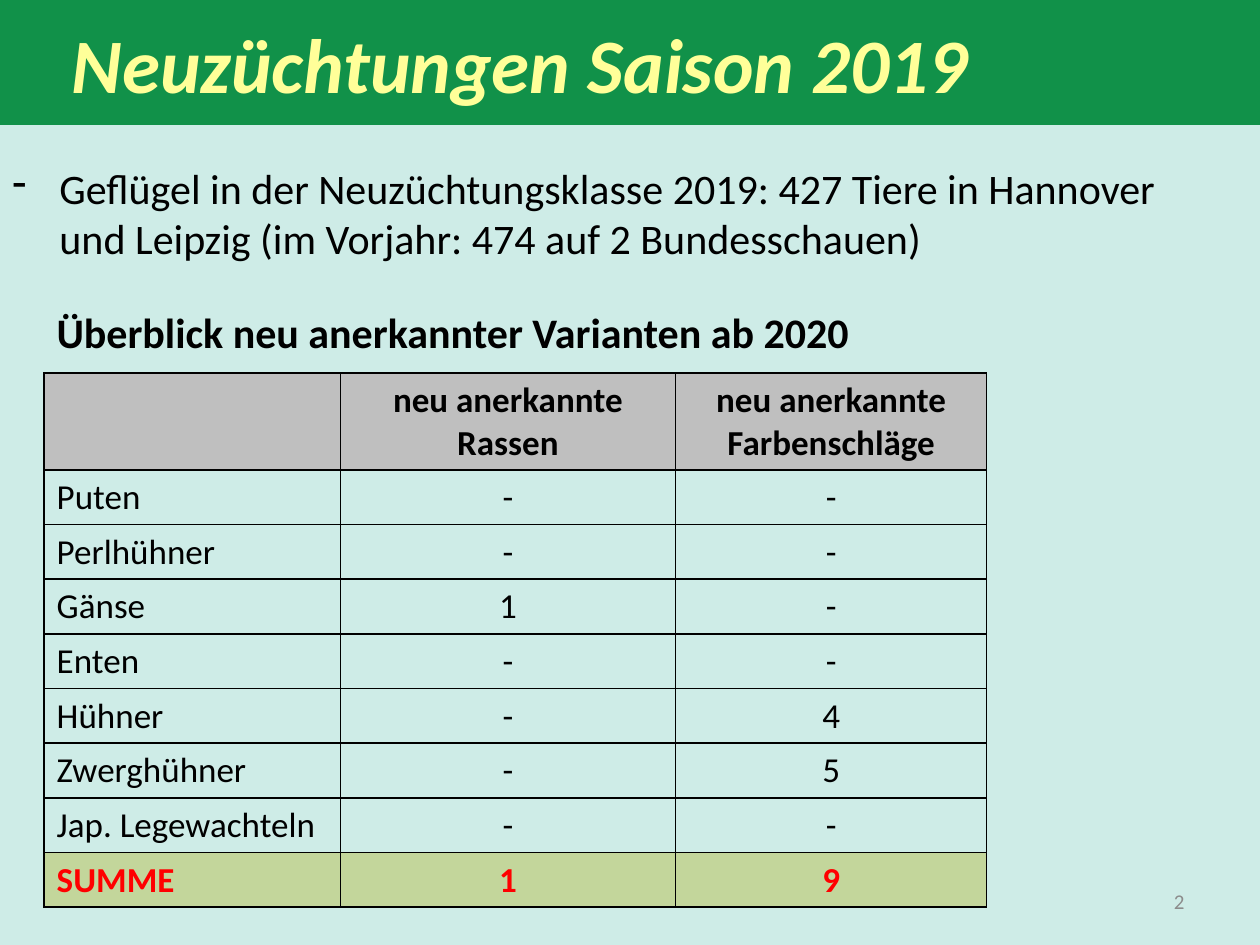
from dataclasses import dataclass

from lxml import etree
from pptx import Presentation
from pptx import util as u
from pptx.dml.color import RGBColor
from pptx.enum import shapes, text
from pptx.oxml.ns import qn

COLORS = {
    "background": "CEECE7",
    "banner": "119149",
    "title": "FFFF99",
    "text": "000000",
    "header": "BFBFBF",
    "total": "C3D69B",
    "total_text": "FF0000",
    "page_number": "8C8C8C",
}
FONT = "Calibri"
COLUMN_WIDTHS = (5.97, 6.76, 6.27)
HEADER_HEIGHT, ROW_HEIGHT = 1.95, 1.1
LEFT, CENTER, RIGHT = text.PP_ALIGN.LEFT, text.PP_ALIGN.CENTER, text.PP_ALIGN.RIGHT


@dataclass(frozen=True)
class TableRow:
    cells: tuple[str, str, str]
    fill: str | None = None
    color: str = "text"
    bold: bool = False


ROWS = (
    TableRow(("", "neu anerkannte\nRassen", "neu anerkannte Farbenschläge"), "header", bold=True),
    TableRow(("Puten", "-", "-")),
    TableRow(("Perlhühner", "-", "-")),
    TableRow(("Gänse", "1", "-")),
    TableRow(("Enten", "-", "-")),
    TableRow(("Hühner", "-", "4")),
    TableRow(("Zwerghühner", "-", "5")),
    TableRow(("Jap. Legewachteln", "-", "-")),
    TableRow(("SUMME", "1", "9"), "total", "total_text", True),
)


def rgb(name: str) -> RGBColor:
    return RGBColor.from_string(COLORS[name])


def write_text(frame, content: str, *, size: float, color: str = "text", bold: bool = False,
               italic: bool = False, align=LEFT, bullet: str | None = None) -> None:
    """Write one paragraph per line of content, all in the same format."""
    frame.word_wrap = True
    for index, line in enumerate(content.split("\n")):
        paragraph = frame.add_paragraph() if index else frame.paragraphs[0]
        paragraph.alignment = align
        if bullet:
            properties = paragraph._p.get_or_add_pPr()
            indent = u.Cm(0.95)
            properties.set("marL", str(indent))
            properties.set("indent", str(-indent))
            etree.SubElement(properties, qn("a:buChar"), char=bullet)
        font = paragraph.font
        if line:
            run = paragraph.add_run()
            run.text = line
            font = run.font
        font.name = FONT
        font.size = u.Pt(size)
        font.bold = bold
        font.italic = italic
        font.color.rgb = rgb(color)


def add_text_box(slide, left: float, top: float, width: float, height: float,
                 content: str, *, anchor=text.MSO_ANCHOR.TOP, **text_format) -> None:
    box = slide.shapes.add_textbox(u.Cm(left), u.Cm(top), u.Cm(width), u.Cm(height))
    box.text_frame.vertical_anchor = anchor
    write_text(box.text_frame, content, **text_format)


def add_banner(slide, width: int, title: str) -> None:
    banner = slide.shapes.add_shape(shapes.MSO_SHAPE.RECTANGLE, 0, 0, width, u.Cm(2.52))
    banner.shadow.inherit = False
    banner.fill.solid()
    banner.fill.fore_color.rgb = rgb("banner")
    banner.line.fill.background()
    frame = banner.text_frame
    frame.vertical_anchor = text.MSO_ANCHOR.BOTTOM
    frame.margin_left, frame.margin_right = u.Cm(1.45), u.Cm(0.46)
    frame.margin_top, frame.margin_bottom = u.Cm(0.13), u.Cm(0.33)
    write_text(frame, title, size=44, color="title", bold=True, italic=True)


def style_cell(cell, fill: str | None) -> None:
    """Give the cell thin borders on all sides and a fill, or none."""
    properties = cell._tc.get_or_add_tcPr()
    for side in ("a:lnL", "a:lnR", "a:lnT", "a:lnB"):
        border = etree.SubElement(properties, qn(side), w=str(u.Pt(1)))
        solid = etree.SubElement(border, qn("a:solidFill"))
        etree.SubElement(solid, qn("a:srgbClr"), val=COLORS["text"])
    if fill:
        cell.fill.solid()
        cell.fill.fore_color.rgb = rgb(fill)
    else:
        cell.fill.background()


def add_overview_table(slide, left: float, top: float) -> None:
    heights = [HEADER_HEIGHT] + [ROW_HEIGHT] * (len(ROWS) - 1)
    table = slide.shapes.add_table(
        len(ROWS), len(COLUMN_WIDTHS), u.Cm(left), u.Cm(top),
        u.Cm(sum(COLUMN_WIDTHS)), u.Cm(sum(heights))).table
    table.horz_banding = False
    for column, width in zip(table.columns, COLUMN_WIDTHS):
        column.width = u.Cm(width)
    for table_row, height, row in zip(table.rows, heights, ROWS):
        table_row.height = u.Cm(height)
        for index, (cell, content) in enumerate(zip(table_row.cells, row.cells)):
            style_cell(cell, row.fill)
            write_text(cell.text_frame, content, size=20, color=row.color,
                       bold=row.bold, align=CENTER if index else LEFT)


def main() -> None:
    presentation = Presentation()
    presentation.slide_width, presentation.slide_height = u.Cm(25.4), u.Cm(19.05)
    slide = presentation.slides.add_slide(presentation.slide_layouts[6])
    slide.background.fill.solid()
    slide.background.fill.fore_color.rgb = rgb("background")

    add_banner(slide, presentation.slide_width, "Neuzüchtungen Saison 2019")
    add_text_box(slide, 0, 3.15, 24.89, 2.31,
                 "Geflügel in der Neuzüchtungsklasse 2019: 427 Tiere in Hannover und Leipzig "
                 "(im Vorjahr: 474 auf 2 Bundesschauen)", size=24, bullet="-")
    add_overview_table(slide, 0.89, 7.52)
    add_text_box(slide, 0.89, 6.05, 24.89, 1.27,
                 "Überblick neu anerkannter Varianten ab 2020", size=24, bold=True)
    add_text_box(slide, 18.21, 17.65, 5.92, 1.02, "2", size=12, color="page_number",
                 align=RIGHT, anchor=text.MSO_ANCHOR.MIDDLE)
    presentation.save("out.pptx")


if __name__ == "__main__":
    main()
